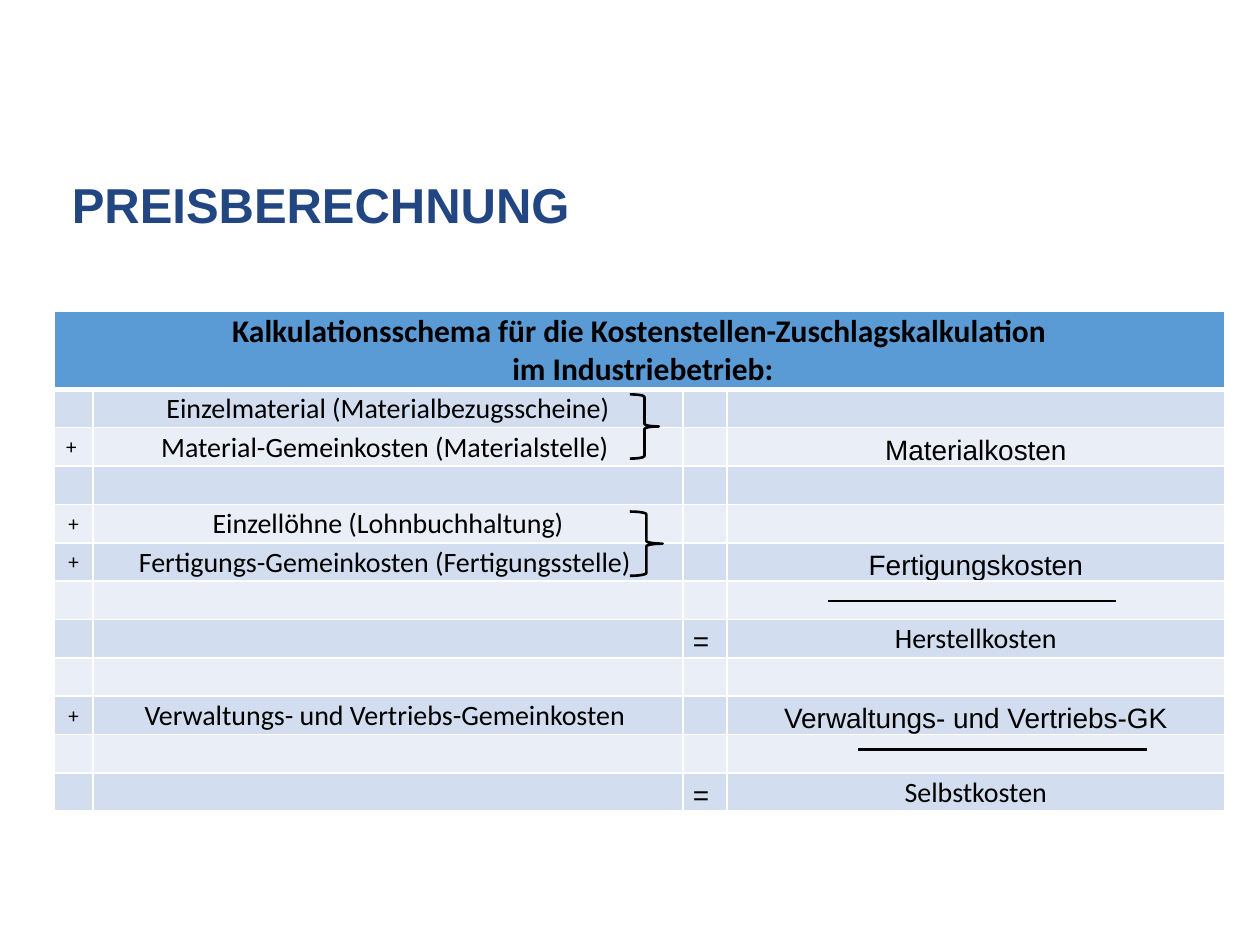
from dataclasses import dataclass

from lxml.etree import SubElement
from pptx import Presentation
from pptx.dml.color import RGBColor
from pptx.enum.shapes import MSO_CONNECTOR, MSO_SHAPE
from pptx.enum.text import MSO_ANCHOR, PP_ALIGN
from pptx.oxml.ns import qn
from pptx.util import Inches, Pt


@dataclass(frozen=True)
class Theme:
    navy: str = "224681"
    black: str = "000000"
    white: str = "FFFFFF"
    blue: str = "5B9BD5"
    bands: tuple = ("D2DEEF", "EAEFF7")
    sans: str = "Arial"
    text: str = "Calibri"
    title: int = 28
    head: int = 18
    body: int = 16
    sign: int = 12
    rule: float = 1.5


THEME = Theme()

HEAD = "Kalkulationsschema für die Kostenstellen-Zuschlagskalkulation\n im Industriebetrieb:"
ROWS = [
    ("", "Einzelmaterial (Materialbezugsscheine)", "", ""),
    ("+ ", "Material-Gemeinkosten (Materialstelle) ", "", "Materialkosten"),
    ("", "", "", ""),
    ("+", "Einzellöhne (Lohnbuchhaltung)", "", ""),
    ("+", "Fertigungs-Gemeinkosten (Fertigungsstelle) ", "", "Fertigungskosten"),
    ("", "", "", ""),
    ("", "", "= ", "Herstellkosten"),
    ("", "", "", ""),
    ("+", "Verwaltungs- und Vertriebs-Gemeinkosten ", "", "Verwaltungs- und Vertriebs-GK"),
    ("", "", "", ""),
    ("", "", "= ", "Selbstkosten"),
]
WIDTHS = (0.31, 4.68, 0.35, 3.95)
HEAD_HIGH = 0.6
BRACES = [(5, 3.13, 0.23, 0.51), (5, 4.06, 0.26, 0.51)]
RULES = [(6.57, 4.77, 2.29), (6.81, 5.95, 2.29)]


def color(code):
    return RGBColor.from_string(code)


def style(para, size, face, bold=False, tone=THEME.black):
    font = para.font
    font.size = Pt(size)
    font.name = face
    font.bold = bold
    font.color.rgb = color(tone)


def border(cell, bottom=1):
    props = cell._tc.get_or_add_tcPr()
    sides = (("a:lnL", 1), ("a:lnR", 1), ("a:lnT", 1), ("a:lnB", bottom))
    for spot, (tag, width) in enumerate(sides):
        line = SubElement(props, qn(tag), w=str(Pt(width)))
        fill = SubElement(line, qn("a:solidFill"))
        SubElement(fill, qn("a:srgbClr"), val=THEME.white)
        props.insert(spot, line)


def fill_cell(cell, text, back, size, face, bold=False, low=False, bottom=1):
    cell.text = text
    cell.fill.solid()
    cell.fill.fore_color.rgb = color(back)
    cell.margin_left = cell.margin_right = cell.margin_top = Inches(0.01)
    cell.margin_bottom = 0
    cell.vertical_anchor = MSO_ANCHOR.BOTTOM if low else MSO_ANCHOR.MIDDLE
    for para in cell.text_frame.paragraphs:
        para.alignment = PP_ALIGN.CENTER
        style(para, size, face, bold)
    border(cell, bottom)


def add_title(slide, box):
    title = slide.shapes.title
    title.left, title.top, title.width, title.height = map(Inches, box)
    frame = title.text_frame
    frame.text = "PREISBERECHNUNG"
    frame.vertical_anchor = MSO_ANCHOR.TOP
    para = frame.paragraphs[0]
    para.alignment = PP_ALIGN.LEFT
    para.line_spacing = 0.9
    style(para, THEME.title, THEME.sans, True, THEME.navy)


def add_scheme(slide, box):
    frame = slide.shapes.add_table(len(ROWS) + 1, len(WIDTHS), *map(Inches, box))
    table = frame.table
    for col, width in zip(table.columns, WIDTHS):
        col.width = Inches(width)
    high = (box[3] - HEAD_HIGH) / len(ROWS)
    for spot, row in enumerate(table.rows):
        row.height = Inches(high if spot else HEAD_HIGH)
    for spot in range(len(WIDTHS)):
        fill_cell(table.cell(0, spot), "" if spot else HEAD, THEME.blue,
                  THEME.head, THEME.text, bold=True, bottom=3)
    table.cell(0, 0).merge(table.cell(0, len(WIDTHS) - 1))
    for line, texts in enumerate(ROWS):
        for spot, text in enumerate(texts):
            low = spot == 2 or (spot == 3 and not texts[2])
            fill_cell(table.cell(line + 1, spot), text, THEME.bands[line % 2],
                      THEME.body if spot and text else THEME.sign,
                      THEME.sans if low else THEME.text, low=low)


def add_brace(slide, box):
    brace = slide.shapes.add_shape(MSO_SHAPE.RIGHT_BRACE, *map(Inches, box))
    brace.shadow.inherit = False
    brace.fill.background()
    brace.line.color.rgb = color(THEME.black)
    brace.line.width = Pt(THEME.rule)


def add_rule(slide, left, top, width):
    ends = map(Inches, (left, top, left + width, top))
    rule = slide.shapes.add_connector(MSO_CONNECTOR.STRAIGHT, *ends)
    rule.line.color.rgb = color(THEME.black)
    rule.line.width = Pt(THEME.rule)
    SubElement(rule._element.spPr, qn("a:effectLst"))


def main():
    deck = Presentation()
    deck.slide_width, deck.slide_height = Inches(10), Inches(7.5)
    slide = deck.slides.add_slide(deck.slide_layouts[5])
    add_title(slide, (0.47, 1.39, 7.64, 0.94))
    add_scheme(slide, (0.43, 2.47, 9.29, 3.95))
    for box in BRACES:
        add_brace(slide, box)
    for rule in RULES:
        add_rule(slide, *rule)
    deck.save("out.pptx")


if __name__ == "__main__":
    main()
